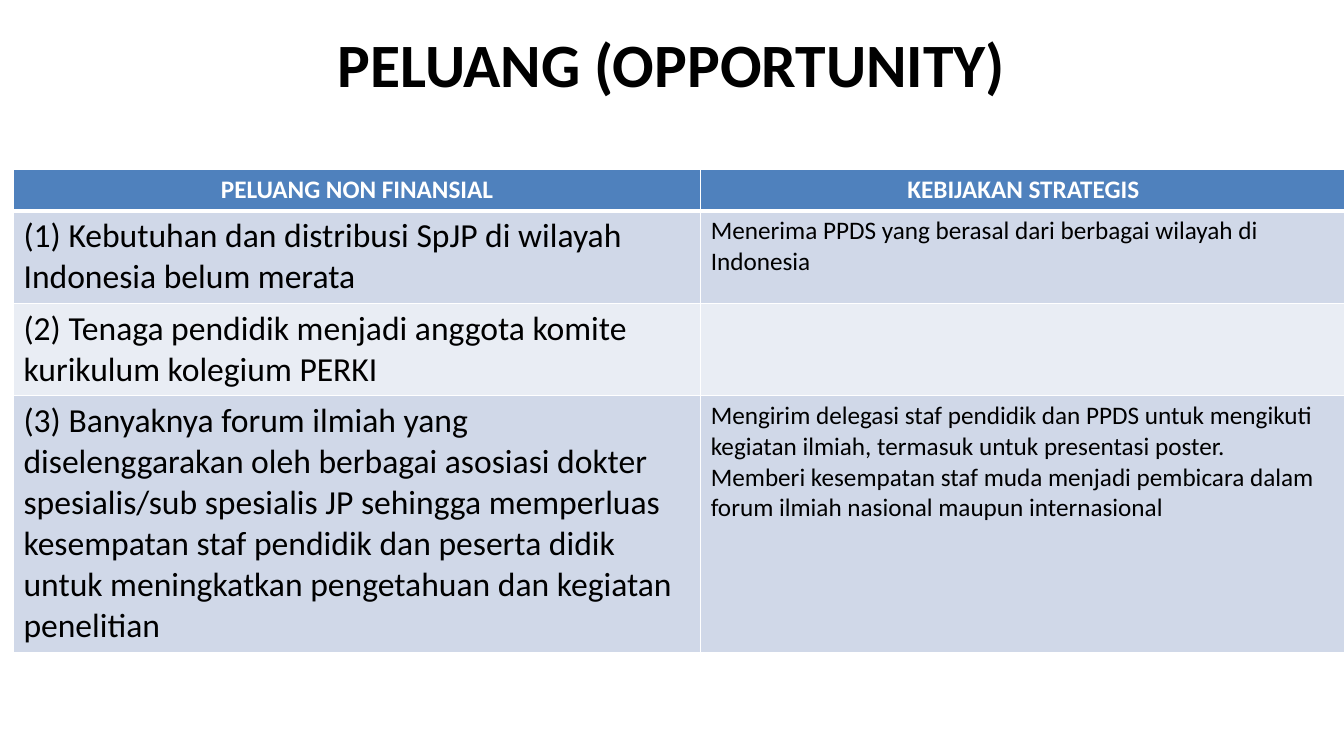
from lxml.etree import SubElement
from pptx import Presentation
from pptx.dml.color import RGBColor
from pptx.enum.text import MSO_ANCHOR, MSO_AUTO_SIZE, PP_ALIGN
from pptx.oxml.ns import qn
from pptx.util import Cm, Pt

HEADINGS = ["PELUANG NON FINANSIAL", "KEBIJAKAN STRATEGIS"]
# Each row: opportunity, strategic policies
OPPORTUNITIES = [
    ("(1) Kebutuhan dan distribusi SpJP di wilayah Indonesia belum merata",
     ["Menerima PPDS yang berasal dari berbagai wilayah di Indonesia"]),
    ("(2) Tenaga pendidik menjadi anggota komite kurikulum kolegium PERKI", []),
    ("(3) Banyaknya forum ilmiah yang diselenggarakan oleh berbagai asosiasi "
     "dokter spesialis/sub spesialis JP sehingga memperluas kesempatan staf "
     "pendidik dan peserta didik untuk meningkatkan pengetahuan dan kegiatan "
     "penelitian",
     ["Mengirim delegasi staf pendidik dan PPDS untuk mengikuti kegiatan "
      "ilmiah, termasuk untuk presentasi poster.",
      "Memberi kesempatan staf muda menjadi pembicara dalam forum ilmiah "
      "nasional maupun internasional"]),
]
COLUMN_WIDTHS = [17.32, 16.26]
ROW_HEIGHTS = [1.04, 2.33, 2.33, 6.48]


def color(hex_value):
    return RGBColor.from_string(hex_value)


class SlideBuilder:
    FONT = "Calibri"
    TEXT, WHITE = "000000", "FFFFFF"
    HEADER_FILL, BANDS = "4F81BD", ["D0D8E8", "E9EDF4"]

    def __init__(self, slide):
        self.slide = slide

    def add_lines(self, frame, lines, size, ink, bold=False, align=PP_ALIGN.LEFT):
        for number, line in enumerate(lines):
            paragraph = frame.add_paragraph() if number else frame.paragraphs[0]
            paragraph.alignment = align
            run = paragraph.add_run()
            run.text = line
            run.font.name = self.FONT
            run.font.size = Pt(size)
            run.font.bold = bold
            run.font.color.rgb = color(ink)

    def title(self, text, left, top, width, height):
        heading = self.slide.shapes.title
        heading.left, heading.top = Cm(left), Cm(top)
        heading.width, heading.height = Cm(width), Cm(height)
        frame = heading.text_frame
        frame.word_wrap = True
        frame.auto_size = MSO_AUTO_SIZE.NONE
        frame.vertical_anchor = MSO_ANCHOR.MIDDLE
        self.add_lines(frame, [text], 44, self.TEXT, True, PP_ALIGN.CENTER)

    def borders(self, cell, top, bottom):
        properties = cell._tc.get_or_add_tcPr()
        for side, points in zip("LRTB", (1, 1, top, bottom)):
            line = SubElement(properties, qn(f"a:ln{side}"), w=str(Pt(points)))
            fill = SubElement(line, qn("a:solidFill"))
            SubElement(fill, qn("a:srgbClr"), val=self.WHITE)

    def cell(self, cell, fill, top=1, bottom=1):
        self.borders(cell, top, bottom)
        cell.fill.solid()
        cell.fill.fore_color.rgb = color(fill)
        return cell.text_frame

    def table(self, headings, rows, left, top, widths, heights):
        grid = self.slide.shapes.add_table(
            len(heights), len(widths), Cm(left), Cm(top),
            Cm(sum(widths)), Cm(sum(heights))).table
        for column, width in zip(grid.columns, widths):
            column.width = Cm(width)
        for row, height in zip(grid.rows, heights):
            row.height = Cm(height)

        # Header row, with a heavy rule below it
        for index, heading in enumerate(headings):
            frame = self.cell(grid.cell(0, index), self.HEADER_FILL, bottom=3)
            self.add_lines(frame, [heading], 18, self.WHITE, True, PP_ALIGN.CENTER)

        # Banded body rows
        for index, (opportunity, policies) in enumerate(rows, 1):
            band = self.BANDS[(index - 1) % 2]
            for column, (lines, size) in enumerate([([opportunity], 24), (policies, 18)]):
                frame = self.cell(grid.cell(index, column), band, top=3 if index == 1 else 1)
                self.add_lines(frame, lines, size, self.TEXT)


def main():
    deck = Presentation()
    deck.slide_width, deck.slide_height = Cm(33.87), Cm(19.05)
    builder = SlideBuilder(deck.slides.add_slide(deck.slide_layouts[5]))
    builder.title("PELUANG (OPPORTUNITY)", 1.69, 0, 30.48, 3.18)
    builder.table(HEADINGS, OPPORTUNITIES, 0.34, 4.27, COLUMN_WIDTHS, ROW_HEIGHTS)
    deck.save("out.pptx")


if __name__ == "__main__":
    main()
